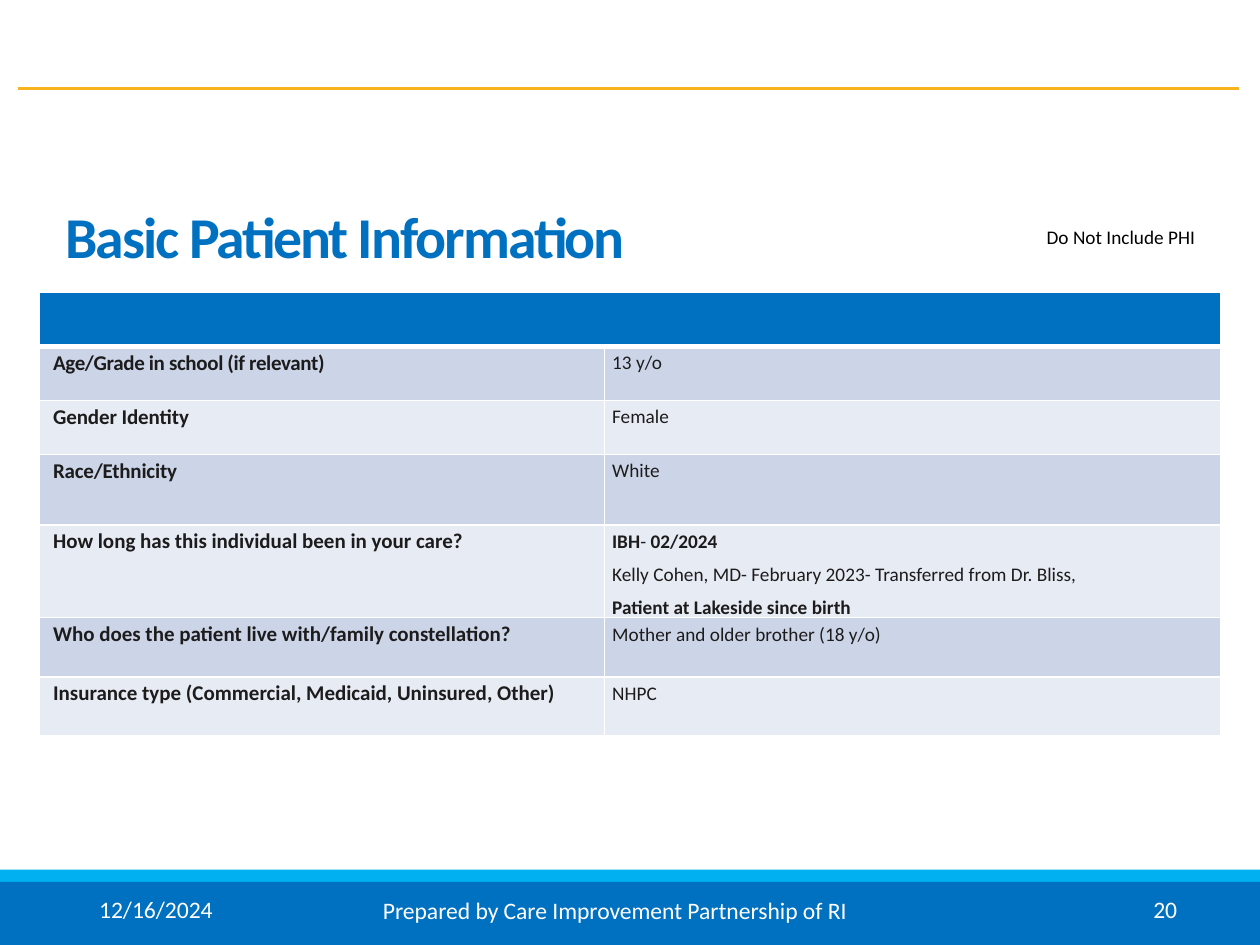
"""Build the Basic Patient Information slide."""
from lxml.etree import SubElement
from pptx import Presentation
from pptx.dml.color import RGBColor
from pptx.enum.shapes import MSO_CONNECTOR, MSO_SHAPE
from pptx.enum.text import MSO_ANCHOR, MSO_AUTO_SIZE, PP_ALIGN
from pptx.oxml import parse_xml
from pptx.oxml.ns import nsdecls, qn
from pptx.util import Cm, Pt

COLORS = {
    "blue": "0070C0", "sky": "00B0F0", "gold": "F7B31D", "white": "FFFFFF",
    "black": "000000", "ink": "1D1C1C", "band_dark": "CCD5E8", "band_light": "E7EBF4",
}


def color(name):
    return RGBColor.from_string(COLORS[name])


def format_run(r, size, name, bold=False, spacing=0):
    r.font.name = "Calibri"
    r.font.size = Pt(size)
    r.font.bold = bold
    r.font.color.rgb = color(name)
    if spacing:
        r.font._element.set("spc", str(round(spacing * 100)))


prs = Presentation()
prs.slide_width, prs.slide_height = Cm(25.4), Cm(19.05)
s = prs.slides.add_slide(prs.slide_layouts[5])

for name, top, height in [("sky", 17.53, 1.52), ("blue", 17.78, 1.27)]:
    sp = s.shapes.add_shape(MSO_SHAPE.RECTANGLE, 0, Cm(top), prs.slide_width, Cm(height))
    sp.shadow.inherit = False
    sp.fill.solid()
    sp.fill.fore_color.rgb = color(name)
    sp.line.fill.background()

rule = s.shapes.add_connector(MSO_CONNECTOR.STRAIGHT, Cm(0.36), Cm(1.78), Cm(24.97), Cm(1.78))
rule.line.color.rgb = color("gold")
rule.line.width = Pt(2)
SubElement(rule._element.spPr, qn("a:effectLst"))

title = s.shapes.title
title.left, title.top, title.width, title.height = Cm(1.32), Cm(4.17), Cm(16.43), Cm(1.3)
tf = title.text_frame
tf.text = "Basic Patient Information"
tf.auto_size = MSO_AUTO_SIZE.NONE
tf.vertical_anchor = MSO_ANCHOR.MIDDLE
tf.margin_left = tf.margin_right = tf.margin_bottom = 0
tf.margin_top = Cm(0.03)
p = tf.paragraphs[0]
p.alignment = PP_ALIGN.LEFT
p.line_spacing = 0.9
p.space_before = Pt(0.5)
format_run(p.runs[0], 33, "blue", True, -1.1)

labels = [
    ("12/16/2024", 1.75, 17.91, 5.72, 1.02, 13.5, "white", PP_ALIGN.LEFT),
    ("Prepared by Care Improvement Partnership of RI", 7.47, 17.93, 10.52, 1.02, 13.5, "white", PP_ALIGN.LEFT),
    ("20", 18.26, 17.91, 5.72, 1.02, 13.5, "white", PP_ALIGN.RIGHT),
    ("Do Not Include PHI", 20.85, 4.42, 3.81, 0.74, 11, "black", PP_ALIGN.LEFT),
]
for text, left, top, width, height, size, name, align in labels:
    tf = s.shapes.add_textbox(Cm(left), Cm(top), Cm(width), Cm(height)).text_frame
    tf.word_wrap = True
    tf.text = text
    p = tf.paragraphs[0]
    p.alignment = align
    format_run(p.runs[0], size, name)

rows = [
    ("Age/Grade in school (if relevant)", -0.2, 1.09, [[("13 y/o", False)]]),
    ("Gender Identity", -0.05, 1.09, [[("Female", False)]]),
    ("Race/Ethnicity", -0.1, 1.42, [[("White", False)]]),
    ("How long has this individual been in your care?", 0, 1.78, [
        [("IBH", True), ("- ", False), ("02/2024", True)],
        [("Kelly Cohen, MD- February 2023- Transferred from Dr. Bliss,", False)],
        [("Patient at Lakeside since birth", True)],
    ]),
    ("Who does the patient live with/family constellation?", 0, 1.19,
     [[("Mother and older brother (18 y/o)", False)]]),
    ("Insurance type (Commercial, Medicaid, Uninsured, Other)", 0, 1.19, [[("NHPC", False)]]),
]
table = s.shapes.add_table(len(rows) + 1, 2, Cm(0.79), Cm(5.89), Cm(23.83), Cm(8.86)).table
table.columns[0].width, table.columns[1].width = Cm(11.4), Cm(12.42)
table.rows[0].height = Cm(1.09)
table.cell(0, 0).merge(table.cell(0, 1))

for i, (question, spacing, height, answer) in enumerate(rows, start=1):
    table.rows[i].height = Cm(height)
    columns = [([[(question, True)]], 12, spacing, 0.28, 0.08, 3.7),
               (answer, 11, 0, 0.15, 0.1, 5.3)]
    for j, (paragraphs, size, spc, left, top, before) in enumerate(columns):
        cell = table.cell(i, j)
        cell.margin_left, cell.margin_top = Cm(left), Cm(top)
        cell.margin_right = cell.margin_bottom = 0
        tf = cell.text_frame
        for k, runs in enumerate(paragraphs):
            p = tf.add_paragraph() if k else tf.paragraphs[0]
            p.space_before = Pt(before)
            for text, bold in runs:
                r = p.add_run()
                r.text = text
                format_run(r, size, "ink", bold, spc)

for i, row in enumerate(table.rows):
    for cell in row.cells:
        cell.fill.solid()
        cell.fill.fore_color.rgb = color("blue" if i == 0 else "band_dark" if i % 2 else "band_light")
        for n, side in enumerate(["lnL", "lnR", "lnT", "lnB"]):
            width = Pt(3 if i == 0 and side == "lnB" else 1)
            cell._tc.get_or_add_tcPr().insert(n, parse_xml(
                f'<a:{side} {nsdecls("a")} w="{width}"><a:solidFill>'
                f'<a:srgbClr val="{COLORS["white"]}"/></a:solidFill></a:{side}>'))

prs.save("out.pptx")
